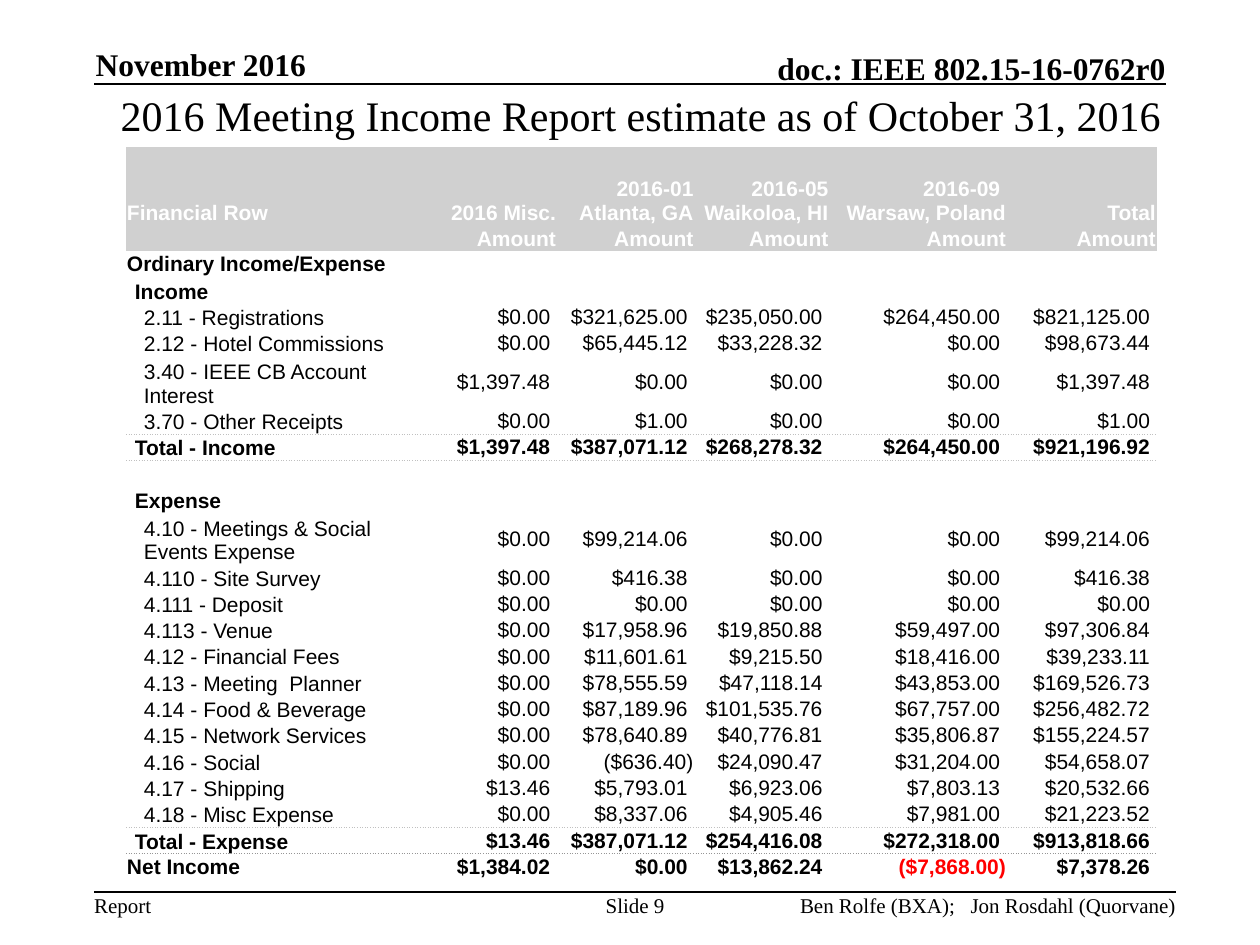
import dataclasses

import lxml.etree
import pptx
import pptx.dml.color
import pptx.enum.shapes
import pptx.enum.text
import pptx.oxml.ns
import pptx.util

Cm = pptx.util.Cm
Pt = pptx.util.Pt
Align = pptx.enum.text.PP_ALIGN
Anchor = pptx.enum.text.MSO_ANCHOR
qn = pptx.oxml.ns.qn


@dataclasses.dataclass(frozen=True)
class Theme:
    serif: str = "Times New Roman"
    sans: str = "Arial"
    ink: str = "000000"
    header_ink: str = "FFFFFF"
    header_fill: str = "D0D0D0"
    negative: str = "FF0000"
    total_rule: str = "C0C0C0"
    net_rule: str = "969696"
    title_size: int = 24
    header_size: int = 18
    small_size: int = 12


THEME = Theme()
NO_GRID_STYLE = "{2D5ABB26-0587-4C30-8999-92F81FD0307C}"
COLUMN_WIDTHS = [6.07, 2.62, 2.77, 2.72, 3.58, 3.02]
HEADER_HEIGHT, LINE_HEIGHT, TWO_LINE_HEIGHT = 1.57, 0.53, 1.02
INDENT, CELL_MARGIN = 0.18, 0.02
HEADER_ROWS = [
    ["Financial Row", "2016 Misc.", "2016-01 Atlanta, GA", "2016-05 Waikoloa, HI",
     "2016-09 \vWarsaw, Poland", "Total"],
    [""] + ["Amount"] * 5,
]
# Outline level, label, amounts in column order
REPORT_ROWS = [
    (0, "Ordinary Income/Expense", ""),
    (1, "Income", ""),
    (2, "2.11 - Registrations", "$0.00 $321,625.00 $235,050.00 $264,450.00 $821,125.00"),
    (2, "2.12 - Hotel Commissions", "$0.00 $65,445.12 $33,228.32 $0.00 $98,673.44"),
    (2, "3.40 - IEEE CB Account Interest", "$1,397.48 $0.00 $0.00 $0.00 $1,397.48"),
    (2, "3.70 - Other Receipts", "$0.00 $1.00 $0.00 $0.00 $1.00"),
    (1, "Total - Income", "$1,397.48 $387,071.12 $268,278.32 $264,450.00 $921,196.92"),
    (0, "", ""),
    (1, "Expense", ""),
    (2, "4.10 - Meetings & Social Events Expense", "$0.00 $99,214.06 $0.00 $0.00 $99,214.06"),
    (2, "4.110 - Site Survey", "$0.00 $416.38 $0.00 $0.00 $416.38"),
    (2, "4.111 - Deposit", "$0.00 $0.00 $0.00 $0.00 $0.00"),
    (2, "4.113 - Venue", "$0.00 $17,958.96 $19,850.88 $59,497.00 $97,306.84"),
    (2, "4.12 - Financial Fees", "$0.00 $11,601.61 $9,215.50 $18,416.00 $39,233.11"),
    (2, "4.13 - Meeting  Planner", "$0.00 $78,555.59 $47,118.14 $43,853.00 $169,526.73"),
    (2, "4.14 - Food & Beverage", "$0.00 $87,189.96 $101,535.76 $67,757.00 $256,482.72"),
    (2, "4.15 - Network Services", "$0.00 $78,640.89 $40,776.81 $35,806.87 $155,224.57"),
    (2, "4.16 - Social", "$0.00 ($636.40) $24,090.47 $31,204.00 $54,658.07"),
    (2, "4.17 - Shipping", "$13.46 $5,793.01 $6,923.06 $7,803.13 $20,532.66"),
    (2, "4.18 - Misc Expense", "$0.00 $8,337.06 $4,905.46 $7,981.00 $21,223.52"),
    (1, "Total - Expense", "$13.46 $387,071.12 $254,416.08 $272,318.00 $913,818.66"),
    (0, "Net Income", "$1,384.02 $0.00 $13,862.24 ($7,868.00) $7,378.26"),
]
TWO_LINE_LABELS = {"3.40 - IEEE CB Account Interest", "4.10 - Meetings & Social Events Expense"}
RULES_ABOVE = {
    "Total - Income": THEME.total_rule,
    "Total - Expense": THEME.total_rule,
    "Net Income": THEME.net_rule,
}


def rgb(value):
    return pptx.dml.color.RGBColor.from_string(value)


def write(para, text, name, size, color=THEME.ink, bold=False, align=Align.LEFT):
    para.text = text
    para.alignment = align
    font = para.font
    font.name, font.size, font.bold = name, Pt(size), bold
    font.color.rgb = rgb(color)
    if not text:
        lxml.etree.SubElement(para._p, qn("a:endParaRPr"), sz=str(size * 100))


def add_text(page, area, text, size, bold=False, align=Align.LEFT,
             anchor=Anchor.TOP, margins=(0, 0), wrap=True):
    box = page.shapes.add_textbox(*map(Cm, area))
    frame = box.text_frame
    frame.word_wrap = wrap
    frame.vertical_anchor = anchor
    frame.margin_left = frame.margin_right = Cm(margins[0])
    frame.margin_top = frame.margin_bottom = Cm(margins[1])
    write(frame.paragraphs[0], text, THEME.serif, size, bold=bold, align=align)


def add_rule(page, left, right, top):
    rule = page.shapes.add_connector(
        pptx.enum.shapes.MSO_CONNECTOR.STRAIGHT, Cm(left), Cm(top), Cm(right), Cm(top))
    rule.line.color.rgb = rgb(THEME.ink)
    rule.line.width = Pt(1)
    lxml.etree.SubElement(rule._element.spPr, qn("a:effectLst"))


def add_border(cell, side, color):
    """Draw a dotted border; side is lnT or lnB."""
    line = lxml.etree.SubElement(
        cell._tc.get_or_add_tcPr(), qn("a:" + side), w=str(Pt(0.5)))
    fill = lxml.etree.SubElement(line, qn("a:solidFill"))
    lxml.etree.SubElement(fill, qn("a:srgbClr"), val=color)
    lxml.etree.SubElement(line, qn("a:prstDash"), val="sysDot")


def fill_cell(cell, text, color, bold, align, anchor, indent=0, fill=None):
    cell.margin_left = Cm(max(indent, CELL_MARGIN))
    cell.margin_right = cell.margin_top = Cm(CELL_MARGIN)
    cell.margin_bottom = 0
    cell.vertical_anchor = anchor
    if fill:
        cell.fill.solid()
        cell.fill.fore_color.rgb = rgb(fill)
    else:
        cell.fill.background()
    write(cell.text_frame.paragraphs[0], text, THEME.sans, THEME.small_size,
          color, bold, align)


def fill_header(table):
    for row, texts in enumerate(HEADER_ROWS):
        for column, text in enumerate(texts):
            fill_cell(table.cell(row, column), text, THEME.header_ink, True,
                      Align.RIGHT if column else Align.LEFT, Anchor.BOTTOM,
                      fill=THEME.header_fill)


def fill_report_row(table, row, level, label, amounts, rules):
    """Write a label and its amounts; positive ones end in a space to clear the brackets."""
    values = amounts.split() or [""] * 5
    for column, value in enumerate([label] + values):
        cell = table.cell(row, column)
        for side, color in rules.items():
            if color:
                add_border(cell, side, color)
        bold = level < 2
        if column == 0:
            fill_cell(cell, label, THEME.ink, bold, Align.LEFT,
                      Anchor.BOTTOM if level else Anchor.MIDDLE, level * INDENT)
            continue
        bracketed = value.startswith("(")
        color = THEME.negative if bracketed and bold else THEME.ink
        text = value if bracketed or not value else value + " "
        fill_cell(cell, text, color, bold, Align.RIGHT, Anchor.MIDDLE)


def add_report(page):
    heights = [HEADER_HEIGHT, LINE_HEIGHT] + [
        TWO_LINE_HEIGHT if label in TWO_LINE_LABELS else LINE_HEIGHT
        for _, label, _ in REPORT_ROWS]
    frame = page.shapes.add_table(
        len(heights), len(COLUMN_WIDTHS), Cm(2.54), Cm(2.96),
        Cm(sum(COLUMN_WIDTHS)), Cm(sum(heights)))
    table = frame.table
    table.first_row = table.horz_banding = False
    next(frame._element.iter(qn("a:tableStyleId"))).text = NO_GRID_STYLE
    for column, width in zip(table.columns, COLUMN_WIDTHS):
        column.width = Cm(width)
    for row, height in zip(table.rows, heights):
        row.height = Cm(height)
    fill_header(table)
    rules = [RULES_ABOVE.get(label) for _, label, _ in REPORT_ROWS] + [None]
    for index, (level, label, amounts) in enumerate(REPORT_ROWS):
        fill_report_row(table, index + len(HEADER_ROWS), level, label, amounts,
                        {"lnT": rules[index], "lnB": rules[index + 1]})


def main():
    deck = pptx.Presentation()
    deck.slide_width, deck.slide_height = Cm(25.4), Cm(19.05)
    page = deck.slides.add_slide(deck.slide_layouts[6])

    add_rule(page, 1.9, 23.5, 1.7)
    add_rule(page, 1.9, 23.7, 17.99)
    add_text(page, (9.95, 0.99, 13.55, 0.76), "doc.: IEEE 802.15-16-0762r0",
             THEME.header_size, True, Align.RIGHT, Anchor.BOTTOM)
    add_text(page, (1.93, 0.92, 5.2, 0.76), "November 2016",
             THEME.header_size, True, anchor=Anchor.BOTTOM)
    add_text(page, (1.9, 17.99, 1.17, 0.51), "Report", THEME.small_size, wrap=False)
    add_text(page, (12.07, 17.99, 1.47, 1.02), "Slide 9",
             THEME.small_size, align=Align.CENTER)
    add_text(page, (15.23, 17.99, 8.48, 0.51), "Ben Rolfe (BXA);   Jon Rosdahl (Quorvane)",
             THEME.small_size, align=Align.RIGHT)
    add_text(page, (2.11, 1.68, 21.62, 1.27),
             "2016 Meeting Income Report estimate as of October 31, 2016",
             THEME.title_size, align=Align.CENTER, margins=(0.25, 0.13))
    add_report(page)
    deck.save("out.pptx")


if __name__ == "__main__":
    main()
